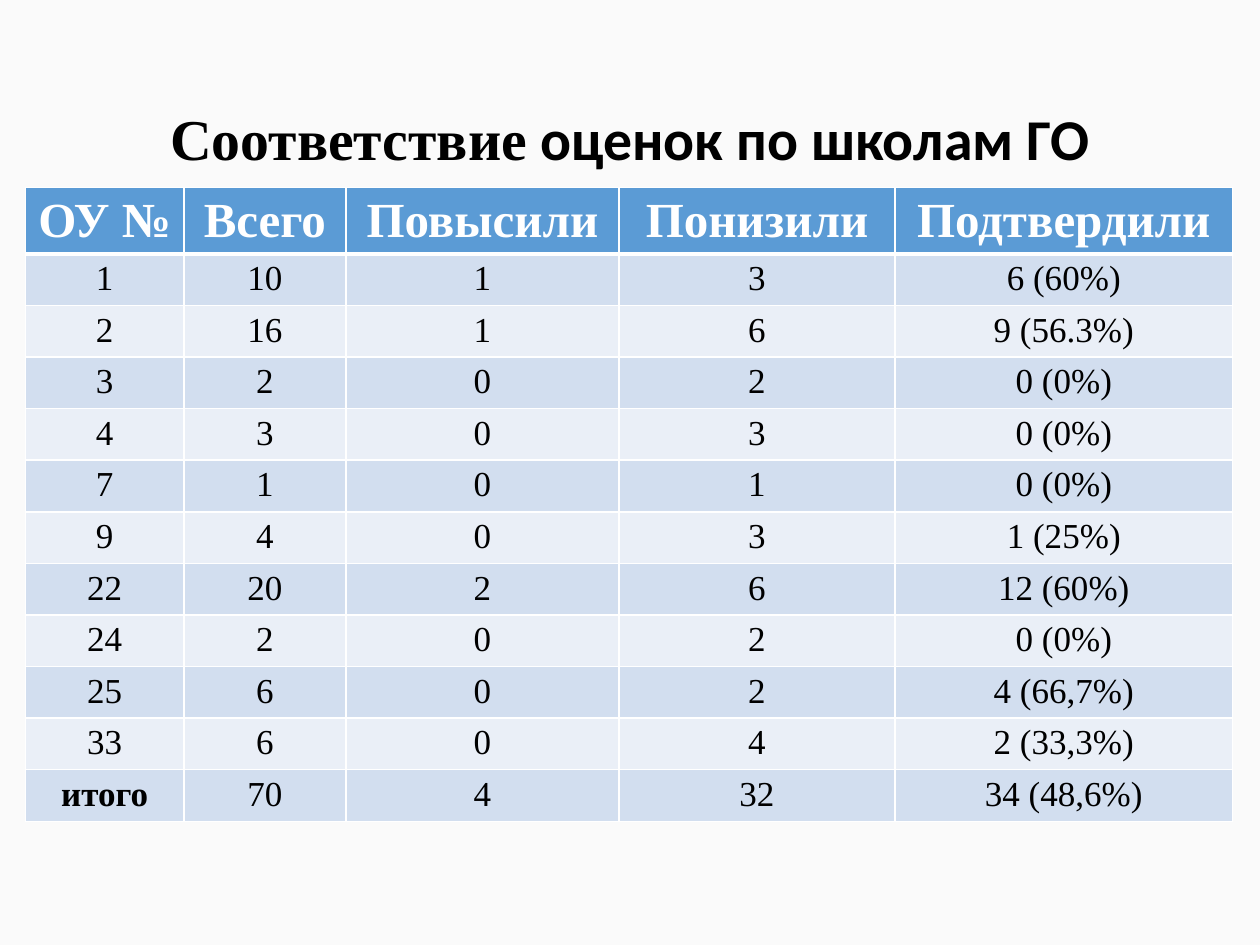
from lxml import etree
from pptx import Presentation
from pptx.dml.color import RGBColor
from pptx.enum.text import MSO_ANCHOR, PP_ALIGN
from pptx.oxml.ns import qn
from pptx.util import Cm, Pt

CENTER = PP_ALIGN.CENTER
MIDDLE = MSO_ANCHOR.MIDDLE

BACKGROUND = RGBColor(0xFA, 0xFA, 0xFA)
BLACK = RGBColor(0x00, 0x00, 0x00)
WHITE = RGBColor(0xFF, 0xFF, 0xFF)
HEADER_BLUE = RGBColor(0x5B, 0x9B, 0xD5)
BAND_FILLS = (RGBColor(0xD2, 0xDE, 0xEF), RGBColor(0xEA, 0xEF, 0xF7))

SERIF = "Times New Roman"
SANS = "Calibri"

# Content
TITLE_RUNS = [("Соответствие", SERIF), (" оценок по школам ГО", SANS)]
HEADER = ("ОУ №", "Всего", "Повысили", "Понизили", "Подтвердили")
SCHOOLS = [
    ("1", "10", "1", "3", "6 (60%)"),
    ("2", "16", "1", "6", "9 (56.3%)"),
    ("3", "2", "0", "2", "0 (0%)"),
    ("4", "3", "0", "3", "0 (0%)"),
    ("7", "1", "0", "1", "0 (0%)"),
    ("9", "4", "0", "3", "1 (25%)"),
    ("22", "20", "2", "6", "12 (60%)"),
    ("24", "2", "0", "2", "0 (0%)"),
    ("25", "6", "0", "2", "4 (66,7%)"),
    ("33", "6", "0", "4", "2 (33,3%)"),
]
TOTAL = ("итого", "70", "4", "32", "34 (48,6%)")
ROWS = [HEADER, *SCHOOLS, TOTAL]

# Table geometry in centimetres
COLUMN_WIDTHS = (3.2, 3.26, 5.51, 5.56, 6.81)
HEADER_HEIGHT = 1.33
ROW_HEIGHT = 1.04
HEADER_TOP_MARGIN = 0.13
ROW_TOP_MARGIN = 0.11
BOTTOM_MARGIN = 0.02


def style_font(font, name, size, color, bold):
    font.name = name
    font.size = Pt(size)
    font.color.rgb = color
    font.bold = bold


def add_borders(cell, top, bottom):
    """White cell borders; widths in points."""
    properties = cell._tc.get_or_add_tcPr()
    for side, width in (("L", 1), ("R", 1), ("T", top), ("B", bottom)):
        line = etree.SubElement(properties, qn(f"a:ln{side}"), w=str(Pt(width)))
        fill = etree.SubElement(line, qn("a:solidFill"))
        etree.SubElement(fill, qn("a:srgbClr"), val=str(WHITE))


def add_title(slide):
    box = slide.shapes.add_textbox(Cm(1.75), Cm(1.02), Cm(21.9), Cm(3.68))
    text_frame = box.text_frame
    text_frame.word_wrap = True
    text_frame.vertical_anchor = MIDDLE
    paragraph = text_frame.paragraphs[0]
    paragraph.alignment = CENTER
    paragraph.line_spacing = 0.9
    for text, font_name in TITLE_RUNS:
        run = paragraph.add_run()
        run.text = text
        style_font(run.font, font_name, 33, BLACK, True)


def add_grades_table(slide):
    height = HEADER_HEIGHT + ROW_HEIGHT * (len(ROWS) - 1)
    table = slide.shapes.add_table(
        len(ROWS), len(HEADER), Cm(0.51), Cm(3.78),
        Cm(sum(COLUMN_WIDTHS)), Cm(height)).table
    for column, width in zip(table.columns, COLUMN_WIDTHS):
        column.width = Cm(width)

    for row_index, values in enumerate(ROWS):
        is_header = row_index == 0
        table.rows[row_index].height = Cm(HEADER_HEIGHT if is_header else ROW_HEIGHT)
        for column_index, value in enumerate(values):
            cell = table.cell(row_index, column_index)
            cell.margin_top = Cm(HEADER_TOP_MARGIN if is_header else ROW_TOP_MARGIN)
            cell.margin_bottom = Cm(BOTTOM_MARGIN)
            add_borders(cell, top=3 if row_index == 1 else 1,
                        bottom=3 if is_header else 1)
            cell.fill.solid()
            cell.fill.fore_color.rgb = (
                HEADER_BLUE if is_header else BAND_FILLS[(row_index - 1) % 2])
            cell.text_frame.text = value
            paragraph = cell.text_frame.paragraphs[0]
            paragraph.alignment = CENTER
            style_font(paragraph.runs[0].font, SERIF, 28 if is_header else 20,
                       WHITE if is_header else BLACK,
                       is_header or value == TOTAL[0])


def main():
    presentation = Presentation()
    presentation.slide_width = Cm(25.4)
    presentation.slide_height = Cm(19.05)
    slide = presentation.slides.add_slide(presentation.slide_layouts[6])
    slide.background.fill.solid()
    slide.background.fill.fore_color.rgb = BACKGROUND
    add_title(slide)
    add_grades_table(slide)
    presentation.save("out.pptx")


if __name__ == "__main__":
    main()
